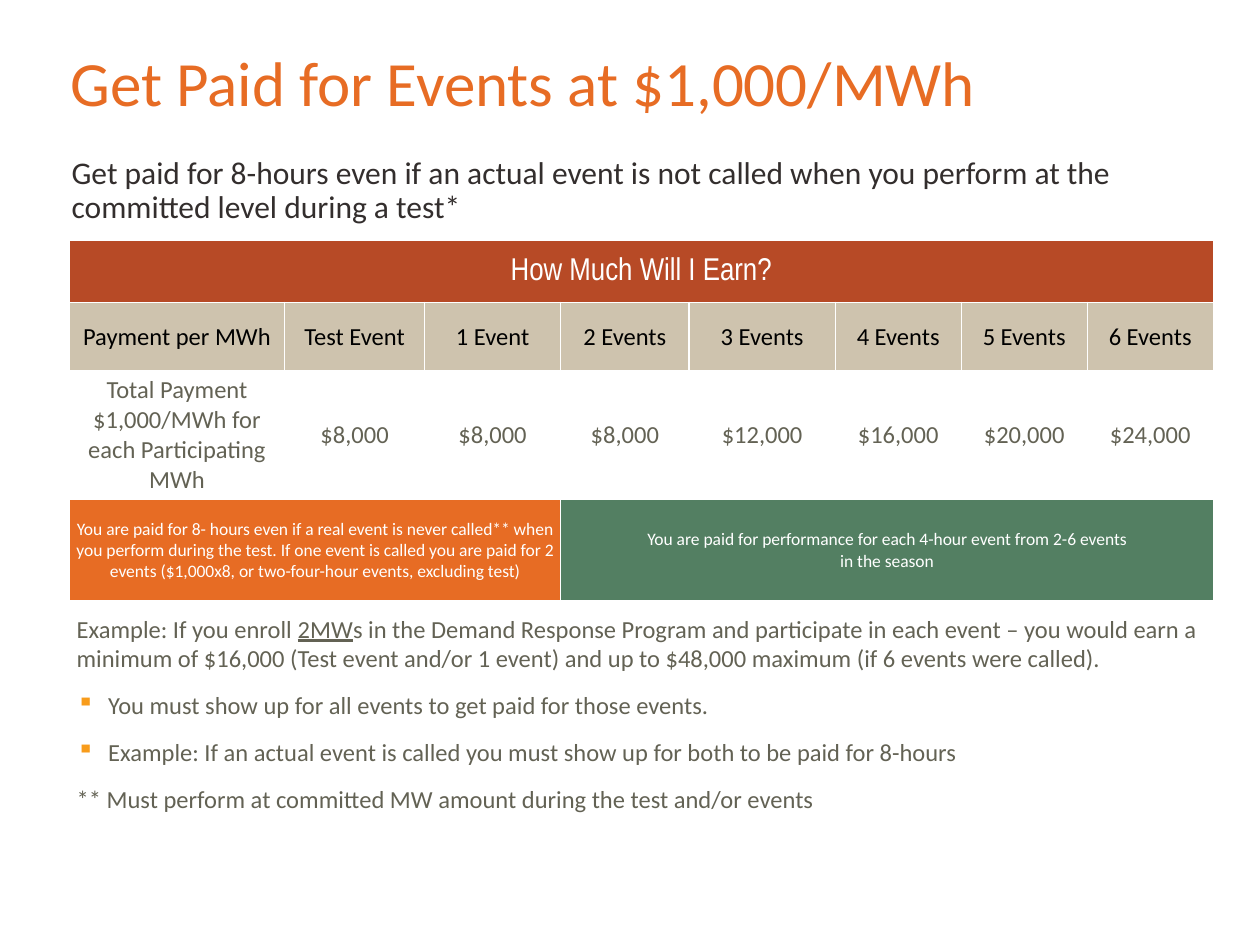
from lxml import etree
from pptx import Presentation
from pptx.dml.color import RGBColor
from pptx.enum.text import MSO_ANCHOR, PP_ALIGN
from pptx.oxml.ns import qn
from pptx.util import Inches, Pt

TOP, MIDDLE = MSO_ANCHOR.TOP, MSO_ANCHOR.MIDDLE
LEFT, CENTER = PP_ALIGN.LEFT, PP_ALIGN.CENTER
ORANGE = RGBColor(0xE7, 0x6C, 0x24)
RUST = RGBColor(0xB7, 0x4A, 0x26)
SAND = RGBColor(0xCE, 0xC3, 0xAE)
GREEN = RGBColor(0x53, 0x7F, 0x62)
GOLD = RGBColor(0xF8, 0x9C, 0x1B)
GRAY = RGBColor(0x63, 0x62, 0x54)
DARK = RGBColor(0x33, 0x2E, 0x2D)
BLACK = RGBColor(0, 0, 0)
WHITE = RGBColor(0xFF, 0xFF, 0xFF)

TITLE = "Get Paid for Events at $1,000/MWh"
LEAD = ("Get paid for 8-hours even if an actual event is not called when you "
        "perform at the committed level during a test*")
# A paragraph is a string, or a list of (text, underlined) runs.
NOTES = [
    [("Example: If you enroll ", False), ("2MW", True),
     ("s in the Demand Response Program and participate in each event – you "
      "would earn a minimum of $16,000 (Test event and/or 1 event) and up to "
      "$48,000 maximum (if 6 events were called).", False)],
    "You must show up for all events to get paid for those events.",
    "Example: If an actual event is called you must show up for both to be "
    "paid for 8-hours",
    "** Must perform at committed MW amount during the test and/or events",
]
BULLETS = (1, 2)

COLS = [1.71, 1.11, 1.08, 1.02, 1.16, 1, 1, 1]
HEADS = ["Payment per MWh", "Test Event", "1 Event"] + [
    f"{n} Events" for n in range(2, 7)]
PAY = ["Total Payment $1,000/MWh for each Participating MWh", "$8,000",
       "$8,000", "$8,000", "$12,000", "$16,000", "$20,000", "$24,000"]
TEST = ("You are paid for 8- hours even if a real event is never called** when "
        "you perform during the test. If one event is called you are paid for "
        "2 events ($1,000x8, or two-four-hour events, excluding test)")
SEASON = ["You are paid for performance for each 4-hour event from 2-6 events",
          "in the season"]
HEAD = dict(fill=SAND, color=BLACK, size=14)
BODY = dict(fill=WHITE, color=GRAY, size=14)
# Row height, then cells as (paragraphs, columns spanned, format).
ROWS = [
    (0.49, [(["How Much Will I Earn?"], 8,
             dict(fill=RUST, color=WHITE, size=18, font="Arial Narrow"))]),
    (0.54, [([text], 1, HEAD) for text in HEADS]),
    (1.02, [([text], 1, BODY) for text in PAY]),
    (0.81, [([TEST], 3, dict(fill=ORANGE, color=WHITE, size=10)),
            (SEASON, 5, dict(fill=GREEN, color=WHITE, size=10))]),
]


def add_bullet(para):
    props = para._p.get_or_add_pPr()
    props.set("marL", str(Inches(0.25)))
    props.set("indent", str(-Inches(0.25)))
    color = etree.SubElement(props, qn("a:buClr"))
    etree.SubElement(color, qn("a:srgbClr"), val=str(GOLD))
    etree.SubElement(props, qn("a:buChar"), char="▪")


def write(frame, paras, size, color, font="Calibri", align=LEFT, gap=0,
          line=None, bullets=()):
    frame.word_wrap = True
    for i, runs in enumerate(paras):
        para = frame.add_paragraph() if i else frame.paragraphs[0]
        para.alignment = align
        para.space_before = Pt(gap if i else 0)
        if line:
            para.line_spacing = line
        if i in bullets:
            add_bullet(para)
        for text, under in [(runs, False)] if isinstance(runs, str) else runs:
            run = para.add_run()
            run.text = text
            run.font.name = font
            run.font.size = Pt(size)
            run.font.color.rgb = color
            if under:
                run.font.underline = True


def set_box(frame, anchor, side, end):
    frame.vertical_anchor = anchor
    frame.margin_left = frame.margin_right = Inches(side)
    frame.margin_top = frame.margin_bottom = Inches(end)


def add_text(slide, at, paras, side=0.1, end=0.05, **form):
    box = slide.shapes.add_textbox(*map(Inches, at))
    set_box(box.text_frame, TOP, side, end)
    write(box.text_frame, paras, **form)


def add_edges(cell):
    """Put a thin white line on each side of a cell."""
    props = cell._tc.get_or_add_tcPr()
    for i, side in enumerate(("lnL", "lnR", "lnT", "lnB")):
        edge = etree.Element(qn(f"a:{side}"), w=str(Pt(1)))
        fill = etree.SubElement(edge, qn("a:solidFill"))
        etree.SubElement(fill, qn("a:srgbClr"), val=str(WHITE))
        props.insert(i, edge)


def fill_cell(cell, paras, fill, **form):
    cell.vertical_anchor = MIDDLE
    cell.margin_left = cell.margin_right = cell.margin_top = Inches(0.01)
    cell.margin_bottom = 0
    cell.fill.solid()
    cell.fill.fore_color.rgb = fill
    write(cell.text_frame, paras, align=CENTER, **form)


def add_grid(slide):
    high = sum(row[0] for row in ROWS)
    grid = slide.shapes.add_table(
        len(ROWS), len(COLS), Inches(0.55), Inches(1.91),
        Inches(sum(COLS)), Inches(high)).table
    for col, wide in zip(grid.columns, COLS):
        col.width = Inches(wide)
    for r, (high, cells) in enumerate(ROWS):
        grid.rows[r].height = Inches(high)
        c = 0
        for paras, span, form in cells:
            cell = grid.cell(r, c)
            if span > 1:
                cell.merge(grid.cell(r, c + span - 1))
            fill_cell(cell, paras, **form)
            c += span
    for cell in grid.iter_cells():
        add_edges(cell)


def main():
    deck = Presentation()
    deck.slide_width, deck.slide_height = Inches(10), Inches(7.5)
    slide = deck.slides.add_slide(deck.slide_layouts[5])
    title = slide.shapes.title
    title.left, title.top = Inches(0.46), Inches(0.22)
    title.width, title.height = Inches(8.31), Inches(0.93)
    set_box(title.text_frame, MIDDLE, 0.1, 0.1)
    write(title.text_frame, [TITLE], size=36, color=ORANGE, line=0.9)
    add_grid(slide)
    add_text(slide, (0.47, 1.15, 9.15, 1.17), [LEAD], end=0.1,
             size=18, color=DARK, line=0.9)
    add_text(slide, (0.51, 4.82, 9.15, 2.68), NOTES,
             size=14, color=GRAY, gap=10, bullets=BULLETS)
    deck.save("out.pptx")


if __name__ == "__main__":
    main()
